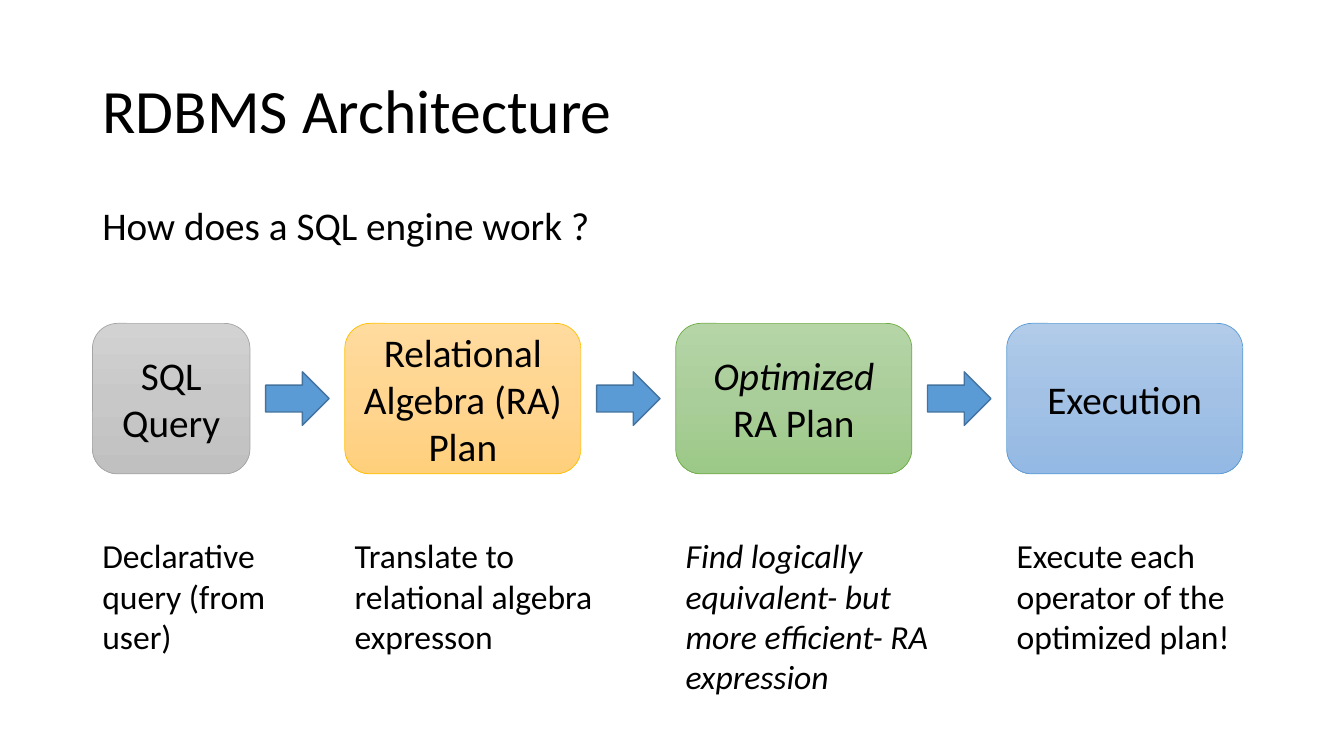
"""Builds the RDBMS architecture slide."""
from copy import deepcopy
from dataclasses import dataclass

from pptx import Presentation
from pptx import util as u
from pptx.dml.color import RGBColor
from pptx.enum import shapes, text


@dataclass(frozen=True)
class Theme:
    """Colours, font and type sizes of the slide."""
    font: str = "Calibri"
    ink: str = "000000"
    arrow: str = "5B9BD5"
    arrow_line: str = "43739E"
    title: int = 44
    body: int = 28
    caption: int = 24


@dataclass(frozen=True)
class Step:
    """One stage of the engine: its box, colours and caption."""
    label: tuple
    width: float
    gradient: tuple
    line: str
    caption: str
    caption_lines: int = 3
    caption_italic: bool = False


THEME = Theme()
LEFT, CONTENT_WIDTH = 2.33, 29.21
STEPS = (
    Step((("SQL Query", False),), 3.97, ("D2D2D2", "C8C8C8", "C0C0C0"), "A5A5A5",
         "Declarative query (from user)"),
    Step((("Relational Algebra (RA) Plan", False),), 5.95,
         ("FFDB9E", "FFD590", "FFD07C"), "FFC000",
         "Translate to relational algebra expresson"),
    Step((("Optimized", True), (" RA Plan", False)), 5.95,
         ("B5D5A7", "AACE9A", "9CC987"), "70AD47",
         "Find logically equivalent- but more efficient- RA expression", 4, True),
    Step((("Execution", False),), 5.95, ("B1CBE9", "A3C1E5", "93B9E4"), "5B9BD5",
         "Execute each operator of the optimized plan!"),
)


def cm_box(left, top, width, height):
    """Return a box given in centimetres as lengths."""
    return [u.Cm(v) for v in (left, top, width, height)]


def write(p, runs, size):
    """Fill a paragraph with (text, italic) runs in the theme font."""
    for words, italic in runs:
        r = p.add_run()
        r.text = words
        r.font.name = THEME.font
        r.font.size = u.Pt(size)
        r.font.italic = italic
        r.font.color.rgb = RGBColor.from_string(THEME.ink)


def add_title(s, words, left, top, width, height):
    """Place and format the title placeholder."""
    sp = s.shapes.title
    sp.left, sp.top, sp.width, sp.height = cm_box(left, top, width, height)
    tf = sp.text_frame
    tf.vertical_anchor = text.MSO_ANCHOR.MIDDLE
    p = tf.paragraphs[0]
    p.alignment = text.PP_ALIGN.LEFT
    p.line_spacing = 0.9
    write(p, [(words, False)], THEME.title)


def add_text(s, words, size, left, top, width, height, italic=False):
    """Add a wrapping text box and return its paragraph."""
    tf = s.shapes.add_textbox(*cm_box(left, top, width, height)).text_frame
    tf.word_wrap = True
    p = tf.paragraphs[0]
    write(p, [(words, italic)], size)
    return p


def add_preset(s, kind, line, line_width, left, top, width, height):
    """Add a shadowless preset shape with a coloured outline."""
    sp = s.shapes.add_shape(kind, *cm_box(left, top, width, height))
    sp.shadow.inherit = False
    sp.line.color.rgb = RGBColor.from_string(line)
    sp.line.width = u.Pt(line_width)
    return sp


def fill_gradient(sp, colours):
    """Fill a shape from top to bottom with three colours."""
    sp.fill.gradient()
    sp.fill.gradient_angle = 270
    first = sp._element.xpath(".//a:gs")[0]
    middle = deepcopy(first)
    middle.set("pos", "50000")
    first.addnext(middle)
    for stop, colour in zip(sp.fill.gradient_stops, colours):
        stop.color.rgb = RGBColor.from_string(colour)


def add_step(s, step, left, top, height):
    """Add a stage box with its caption below."""
    sp = add_preset(s, shapes.MSO_SHAPE.ROUNDED_RECTANGLE, step.line, 0.5,
                    left, top, step.width, height)
    fill_gradient(sp, step.gradient)
    tf = sp.text_frame
    tf.word_wrap = True
    tf.vertical_anchor = text.MSO_ANCHOR.MIDDLE
    p = tf.paragraphs[0]
    p.alignment = text.PP_ALIGN.CENTER
    write(p, step.label, THEME.body)
    add_text(s, step.caption, THEME.caption, left, top + height + 1.42,
             step.width + 0.95, 0.25 + 1.03 * step.caption_lines,
             step.caption_italic)


def add_arrow(s, left, top, gap, height):
    """Centre a block arrow in the gap between two boxes."""
    arrow_width, arrow_height = 1.6, 1.35
    sp = add_preset(s, shapes.MSO_SHAPE.RIGHT_ARROW, THEME.arrow_line, 1,
                    left + (gap - arrow_width) / 2,
                    top + (height - arrow_height) / 2,
                    arrow_width, arrow_height)
    sp.fill.solid()
    sp.fill.fore_color.rgb = RGBColor.from_string(THEME.arrow)


def add_pipeline(s, steps, left, top, height, gap):
    """Lay the stages out in a row joined by arrows."""
    for i, step in enumerate(steps):
        if i:
            add_arrow(s, left - gap, top, gap, height)
        add_step(s, step, left, top, height)
        left += step.width + gap


def main():
    """Build and save the presentation."""
    prs = Presentation()
    prs.slide_width, prs.slide_height = u.Cm(33.87), u.Cm(19.05)
    s = prs.slides.add_slide(prs.slide_layouts.get_by_name("Title Only"))
    add_title(s, "RDBMS Architecture", LEFT, 1.01, CONTENT_WIDTH, 3.68)
    p = add_text(s, "How does a SQL engine work ?", THEME.body,
                 LEFT, 5.08, CONTENT_WIDTH, 1.68)
    p.line_spacing = 0.9
    p.space_before = u.Pt(10)
    add_pipeline(s, STEPS, LEFT, 8.15, 3.79, 2.39)
    prs.save("out.pptx")


if __name__ == "__main__":
    main()
